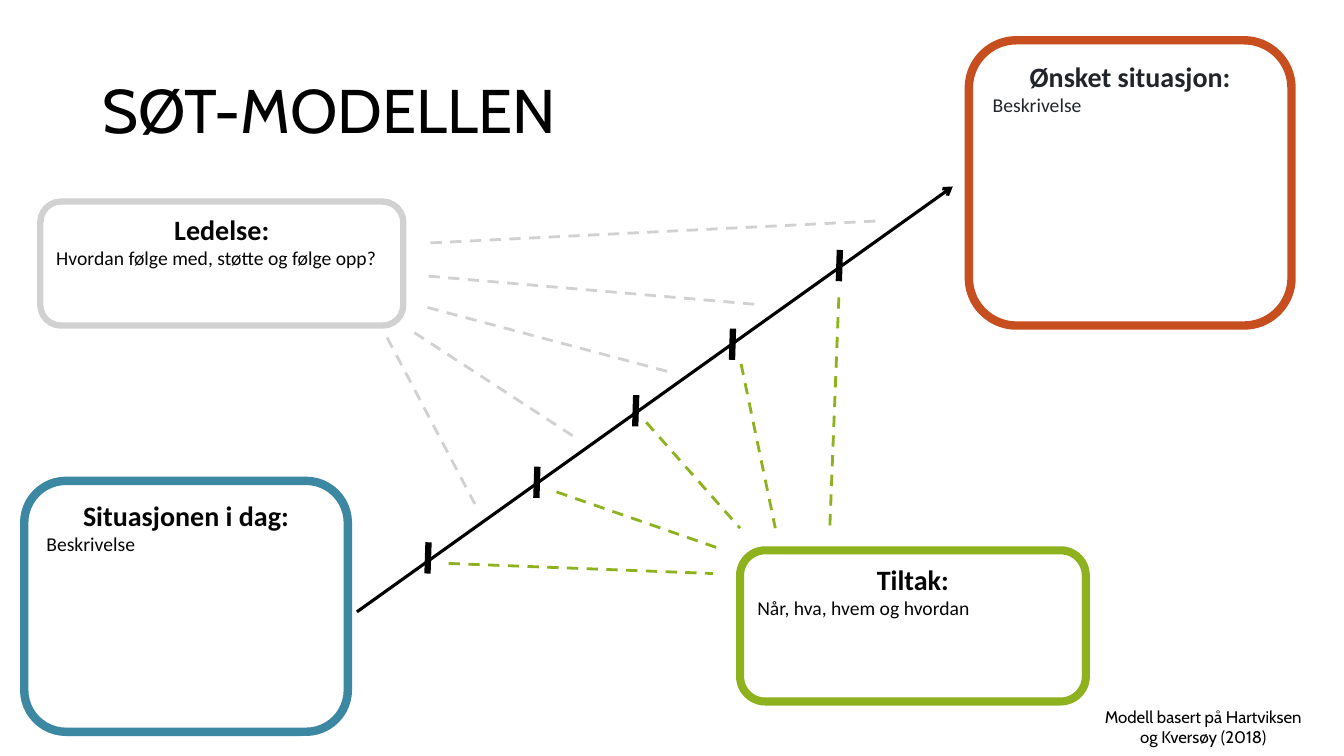
"""Build the SØT model slide: four framed boxes around a rising arrow."""
from dataclasses import dataclass

import pptx
import pptx.dml.color
import pptx.enum.dml
import pptx.enum.shapes
import pptx.enum.text
import pptx.oxml.ns
import pptx.shapes.connector
import pptx.slide
import pptx.text.text
import pptx.util
from lxml import etree

Inches = pptx.util.Inches
Align = pptx.enum.text.PP_ALIGN
Anchor = pptx.enum.text.MSO_ANCHOR


@dataclass(frozen=True)
class Theme:
    black: str = "000000"
    ink: str = "050505"
    slate: str = "212529"
    white: str = "FFFFFF"
    orange: str = "C74F1F"
    blue: str = "3C87A1"
    green: str = "8EB21E"
    grey: str = "D1D1D1"
    display_font: str = "Cabin"
    body_font: str = "Calibri"
    title_size: float = 44
    heading_size: float = 20
    body_size: float = 14
    credit_size: float = 12


@dataclass(frozen=True)
class Panel:
    heading: str
    body: str
    left: float
    top: float
    width: float
    height: float
    frame: str
    frame_width: float
    ink: str


@dataclass(frozen=True)
class Stroke:
    start: tuple[float, float]
    end: tuple[float, float]
    color: str
    width: float
    dashed: bool = False
    arrow: bool = False


@dataclass(frozen=True)
class Label:
    text: str
    left: float
    top: float
    width: float
    height: float
    size: float
    align: Align
    anchor: Anchor
    spacing: float = 1.0


THEME = Theme()

PANELS = [
    Panel("Ønsket situasjon:", "Beskrivelse", 9.61, 0.4, 3.2, 2.83, THEME.orange, 6, THEME.slate),
    Panel("Situasjonen i dag:", "Beskrivelse", 0.24, 4.77, 3.21, 2.49, THEME.blue, 6, THEME.ink),
    Panel("Tiltak:", "Når, hva, hvem og hvordan", 7.34, 5.46, 3.43, 1.5, THEME.green, 5.75, THEME.ink),
    Panel("Ledelse:", "Hvordan følge med, støtte og følge opp?", 0.4, 2, 3.6, 1.23, THEME.grey, 4.5, THEME.ink),
]

LABELS = [
    Label("SØT-MODELLEN", 0.92, 0.4, 11.5, 1.45, THEME.title_size, Align.LEFT, Anchor.MIDDLE, 0.9),
    Label("Modell basert på Hartviksen og Kversøy (2018)", 10.77, 6.96, 2.33, 0.5,
          THEME.credit_size, Align.CENTER, Anchor.TOP),
]

MILESTONES = [(4.25, 5.38), (5.33, 4.63), (6.31, 3.92), (7.27, 3.26), (8.33, 2.48)]

ACTION_RAYS = [
    ((8.32, 2.95), (8.23, 5.24)),
    ((7.35, 3.61), (7.69, 5.24)),
    ((6.41, 4.19), (7.34, 5.24)),
    ((5.52, 4.88), (7.13, 5.44)),
    ((4.45, 5.59), (7.07, 5.69)),
]

LEADERSHIP_RAYS = [
    ((4.11, 3.3), (5.69, 4.33)),
    ((4.24, 3.05), (6.64, 3.69)),
    ((4.25, 2.74), (7.5, 3.02)),
    ((4.27, 2.41), (8.75, 2.19)),
    ((3.84, 3.35), (4.71, 5)),
]

STROKES = [
    Stroke((3.54, 6.07), (9.45, 1.85), THEME.black, 2.25, arrow=True),
    *(Stroke((x, y), (x - 0.01, y + 0.31), THEME.black, 4.5) for x, y in MILESTONES),
    *(Stroke(start, end, THEME.green, 2, dashed=True) for start, end in ACTION_RAYS),
    *(Stroke(start, end, THEME.grey, 2, dashed=True) for start, end in LEADERSHIP_RAYS),
]


def rgb(color: str) -> pptx.dml.color.RGBColor:
    """Turn a hex string into a colour."""
    return pptx.dml.color.RGBColor.from_string(color)


def style_para(para: pptx.text.text._Paragraph, font: str, size: float, color: str,
               align: Align, bold: bool = False) -> None:
    """Set the alignment and font of a paragraph."""
    para.alignment = align
    para.font.name = font
    para.font.size = pptx.util.Pt(size)
    para.font.bold = bold
    para.font.color.rgb = rgb(color)


def draw_panel(page: pptx.slide.Slide, panel: Panel) -> None:
    """Draw a rounded frame with a heading and a description."""
    box = page.shapes.add_shape(
        pptx.enum.shapes.MSO_SHAPE.ROUNDED_RECTANGLE,
        Inches(panel.left), Inches(panel.top), Inches(panel.width), Inches(panel.height))
    box.shadow.inherit = False
    box.fill.solid()
    box.fill.fore_color.rgb = rgb(THEME.white)
    box.line.color.rgb = rgb(panel.frame)
    box.line.width = pptx.util.Pt(panel.frame_width)
    frame = box.text_frame
    frame.word_wrap = True
    frame.vertical_anchor = Anchor.TOP
    heading = frame.paragraphs[0]
    heading.text = panel.heading
    style_para(heading, THEME.body_font, THEME.heading_size, panel.ink, Align.CENTER, bold=True)
    body = frame.add_paragraph()
    body.text = panel.body
    style_para(body, THEME.body_font, THEME.body_size, panel.ink, Align.LEFT)


def draw_label(page: pptx.slide.Slide, label: Label) -> None:
    """Draw a free-standing line of text."""
    box = page.shapes.add_textbox(
        Inches(label.left), Inches(label.top), Inches(label.width), Inches(label.height))
    frame = box.text_frame
    frame.word_wrap = True
    frame.vertical_anchor = label.anchor
    para = frame.paragraphs[0]
    para.text = label.text
    para.line_spacing = label.spacing
    style_para(para, THEME.display_font, label.size, THEME.black, label.align)


def draw_stroke(page: pptx.slide.Slide, stroke: Stroke) -> pptx.shapes.connector.Connector:
    """Draw a straight line, dashed or with an arrowhead on request."""
    line = page.shapes.add_connector(
        pptx.enum.shapes.MSO_CONNECTOR.STRAIGHT,
        *(Inches(length) for length in stroke.start + stroke.end))
    line.line.color.rgb = rgb(stroke.color)
    line.line.width = pptx.util.Pt(stroke.width)
    if stroke.dashed:
        line.line.dash_style = pptx.enum.dml.MSO_LINE.DASH
    properties = line._element.spPr
    if stroke.arrow:
        outline = properties.find(pptx.oxml.ns.qn("a:ln"))
        etree.SubElement(outline, pptx.oxml.ns.qn("a:tailEnd"), type="arrow")
    etree.SubElement(properties, pptx.oxml.ns.qn("a:effectLst"))
    return line


def main() -> None:
    """Build and save the deck."""
    deck = pptx.Presentation()
    deck.slide_width, deck.slide_height = Inches(13.33), Inches(7.5)
    page = deck.slides.add_slide(deck.slide_layouts[6])
    for stroke in STROKES:
        draw_stroke(page, stroke)
    for panel in PANELS:
        draw_panel(page, panel)
    for label in LABELS:
        draw_label(page, label)
    deck.save("out.pptx")


if __name__ == "__main__":
    main()
